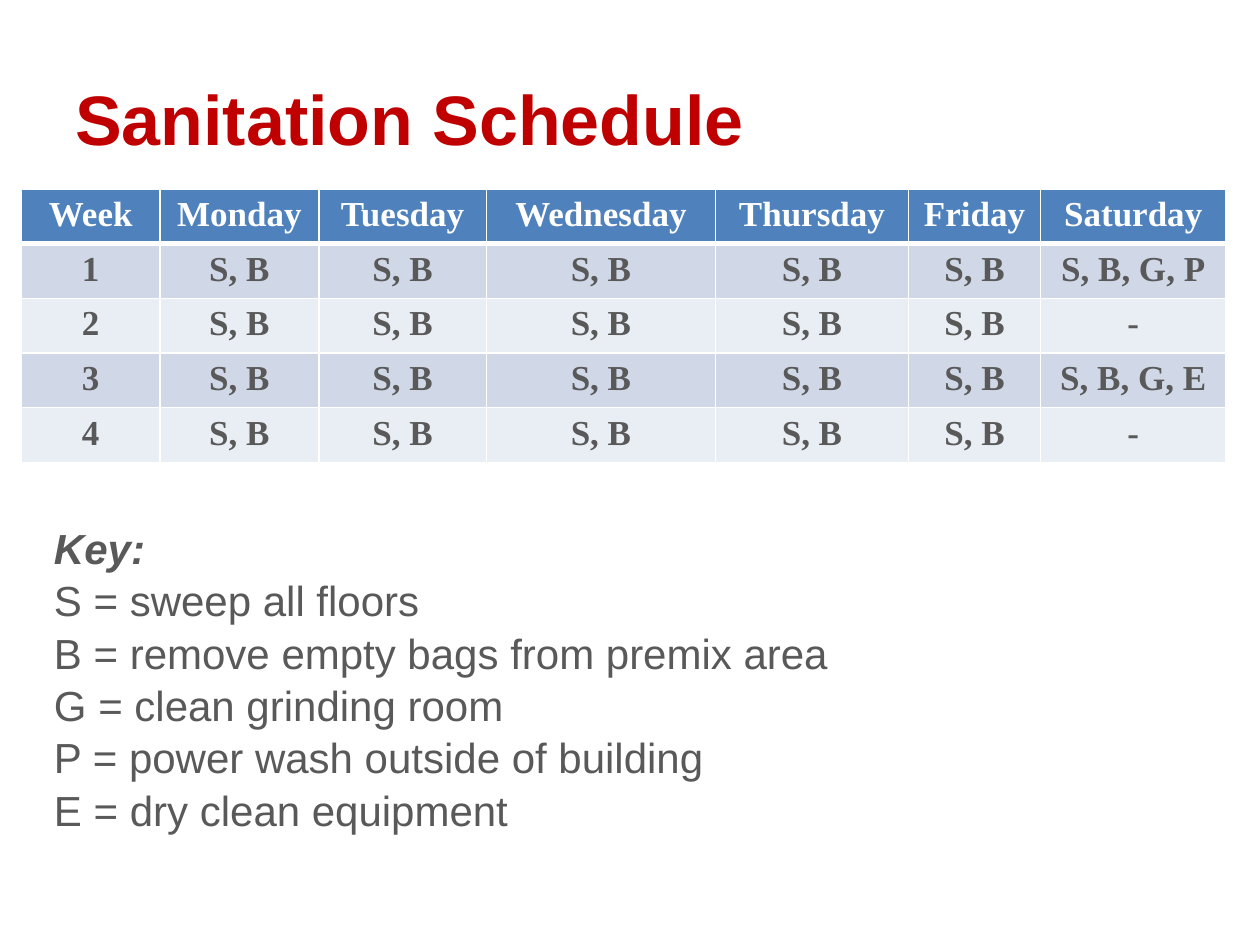
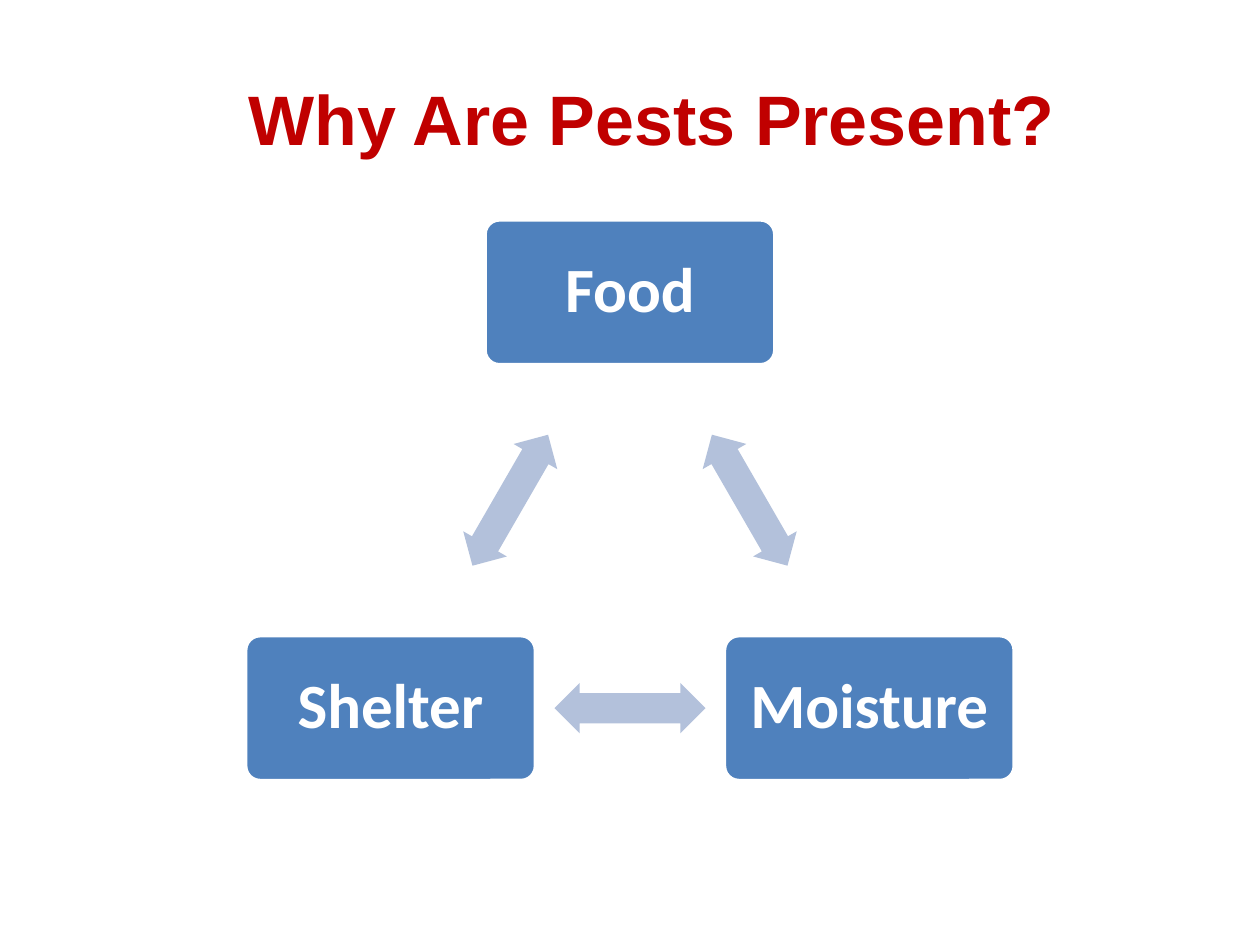
"""Build two slides on plant sanitation and pests."""
from typing import NamedTuple

from lxml.etree import SubElement as Sub
from pptx import Presentation
from pptx.dml.color import RGBColor
from pptx.enum.shapes import MSO_SHAPE as Shape
from pptx.enum.text import MSO_ANCHOR as Anchor, PP_ALIGN as Align
from pptx.oxml.ns import qn
from pptx.util import Inches, Pt

RED = RGBColor(0xC0, 0x00, 0x00)
BLUE = RGBColor(0x4F, 0x81, 0xBD)
PALE = RGBColor(0xB3, 0xC1, 0xDB)
DARK = RGBColor(0x59, 0x59, 0x59)
WHITE = RGBColor(0xFF, 0xFF, 0xFF)
BANDS = RGBColor(0xE9, 0xED, 0xF4), RGBColor(0xD0, 0xD8, 0xE8)

DAYS = ["Week", "Monday", "Tuesday", "Wednesday", "Thursday", "Friday", "Saturday"]
WIDTHS = [1.1, 1.26, 1.33, 1.82, 1.53, 1.05, 1.47]
WEEKEND = ["S, B, G, P", "-", "S, B, G, E", "-"]
KEY = [
    "Key:",
    "S = sweep all floors",
    "B = remove empty bags from premix area",
    "G = clean grinding room",
    "P = power wash outside of building",
    "E = dry clean equipment",
]
ROW = 0.41
BOX_W, BOX_H = 2.3, 1.15
ARROW_W, ARROW_H = 1.2, 0.4


class Style(NamedTuple):
    """Font settings of a paragraph."""
    face: str
    size: int
    color: RGBColor
    bold: bool = True
    slant: bool = False


class Need(NamedTuple):
    """A thing pests need, with the centre of its box."""
    text: str
    x: float
    y: float


HEAD = Style("Arial", 40, RED)
LABEL = Style("Calibri", 36, WHITE)
DAY = Style("Times New Roman", 20, WHITE)
TASK = DAY._replace(color=DARK)
NOTE = Style("Arial", 24, DARK, False)
LEAD = NOTE._replace(bold=True, slant=True)

NEEDS = [Need("Food", 5, 2.32), Need("Moisture", 6.9, 5.62), Need("Shelter", 3.1, 5.62)]


def write(para, text: str, style: Style, align=Align.LEFT) -> None:
    """Put styled text in a paragraph."""
    para.text, para.alignment = text, align
    font = para.font
    font.name, font.size = style.face, Pt(style.size)
    font.bold, font.italic = style.bold, style.slant
    font.color.rgb = style.color


def add_text(slide, x: float, y: float, w: float, h: float):
    """Add a wrapping text box and return its frame."""
    frame = slide.shapes.add_textbox(Inches(x), Inches(y), Inches(w), Inches(h)).text_frame
    frame.word_wrap = True
    return frame


def add_slide(deck, title: str, x: float, align):
    """Add a blank slide with a title."""
    slide = deck.slides.add_slide(deck.slide_layouts[6])
    frame = add_text(slide, x, 0.5, 9, 1.25)
    frame.margin_top = Inches(0.1)
    write(frame.paragraphs[0], title, HEAD, align)
    return slide


def add_edges(cell, base: int) -> None:
    """Draw white borders round a cell."""
    props = cell._tc.get_or_add_tcPr()
    for side, width in zip("LRTB", (1, 1, 1, base)):
        line = Sub(props, qn(f"a:ln{side}"), w=str(Pt(width)))
        Sub(Sub(line, qn("a:solidFill")), qn("a:srgbClr"), val=str(WHITE))


def add_plan(slide) -> None:
    """Add the table of weekly tasks."""
    rows = [DAYS] + [[str(week), *["S, B"] * 5, last]
                     for week, last in enumerate(WEEKEND, 1)]
    table = slide.shapes.add_table(
        len(rows), len(DAYS), Inches(0.17), Inches(1.5),
        Inches(sum(WIDTHS)), Inches(ROW * len(rows))).table
    for col, width in zip(table.columns, WIDTHS):
        col.width = Inches(width)
    for i, row in enumerate(rows):
        table.rows[i].height = Inches(ROW)
        for j, text in enumerate(row):
            cell = table.cell(i, j)
            add_edges(cell, 1 if i else 3)
            cell.fill.solid()
            cell.fill.fore_color.rgb = BANDS[i % 2] if i else BLUE
            write(cell.text_frame.paragraphs[0], text, TASK if i else DAY, Align.CENTER)


def add_key(slide) -> None:
    """Add the key to the task letters."""
    frame = add_text(slide, 0.33, 4.08, 8.42, 2.52)
    for i, text in enumerate(KEY):
        para = frame.add_paragraph() if i else frame.paragraphs[0]
        write(para, text, NOTE if i else LEAD)
        para.line_spacing = 1.04


def add_form(slide, kind, x: float, y: float, w: float, h: float, fill: RGBColor):
    """Add a filled shape centred on a point."""
    form = slide.shapes.add_shape(
        kind, Inches(x - w / 2), Inches(y - h / 2), Inches(w), Inches(h))
    form.shadow.inherit = False
    form.fill.solid()
    form.fill.fore_color.rgb = fill
    form.line.fill.background()
    return form


def add_need(slide, need: Need) -> None:
    """Add the labelled box of one need."""
    box = add_form(slide, Shape.ROUNDED_RECTANGLE, need.x, need.y, BOX_W, BOX_H, BLUE)
    box.adjustments[0] = 0.1
    box.line.color.rgb, box.line.width = WHITE, Pt(2)
    frame = box.text_frame
    frame.word_wrap, frame.vertical_anchor = True, Anchor.MIDDLE
    frame.margin_left = frame.margin_right = Inches(0.15)
    frame.margin_top = frame.margin_bottom = Inches(0.15)
    para = frame.paragraphs[0]
    write(para, need.text, LABEL, Align.CENTER)
    para.line_spacing = 0.9


def add_link(slide, start: Need, end: Need, turn: int) -> None:
    """Add a double arrow midway between two needs."""
    arrow = add_form(slide, Shape.LEFT_RIGHT_ARROW, (start.x + end.x) / 2,
                     (start.y + end.y) / 2, ARROW_W, ARROW_H, PALE)
    arrow.adjustments[0], arrow.adjustments[1] = 0.6, 0.5
    arrow.rotation = turn


def main() -> None:
    """Build and save the deck."""
    deck = Presentation()
    deck.slide_width, deck.slide_height = Inches(10), Inches(7.5)

    slide = add_slide(deck, "Sanitation Schedule", 0.5, Align.LEFT)
    add_plan(slide)
    add_key(slide)

    slide = add_slide(deck, "Why Are Pests Present?", 0.67, Align.CENTER)
    for i, need in enumerate(NEEDS):
        add_need(slide, need)
        add_link(slide, need, NEEDS[(i + 1) % len(NEEDS)], 60 + 120 * i)

    deck.save("out.pptx")


if __name__ == "__main__":
    main()
